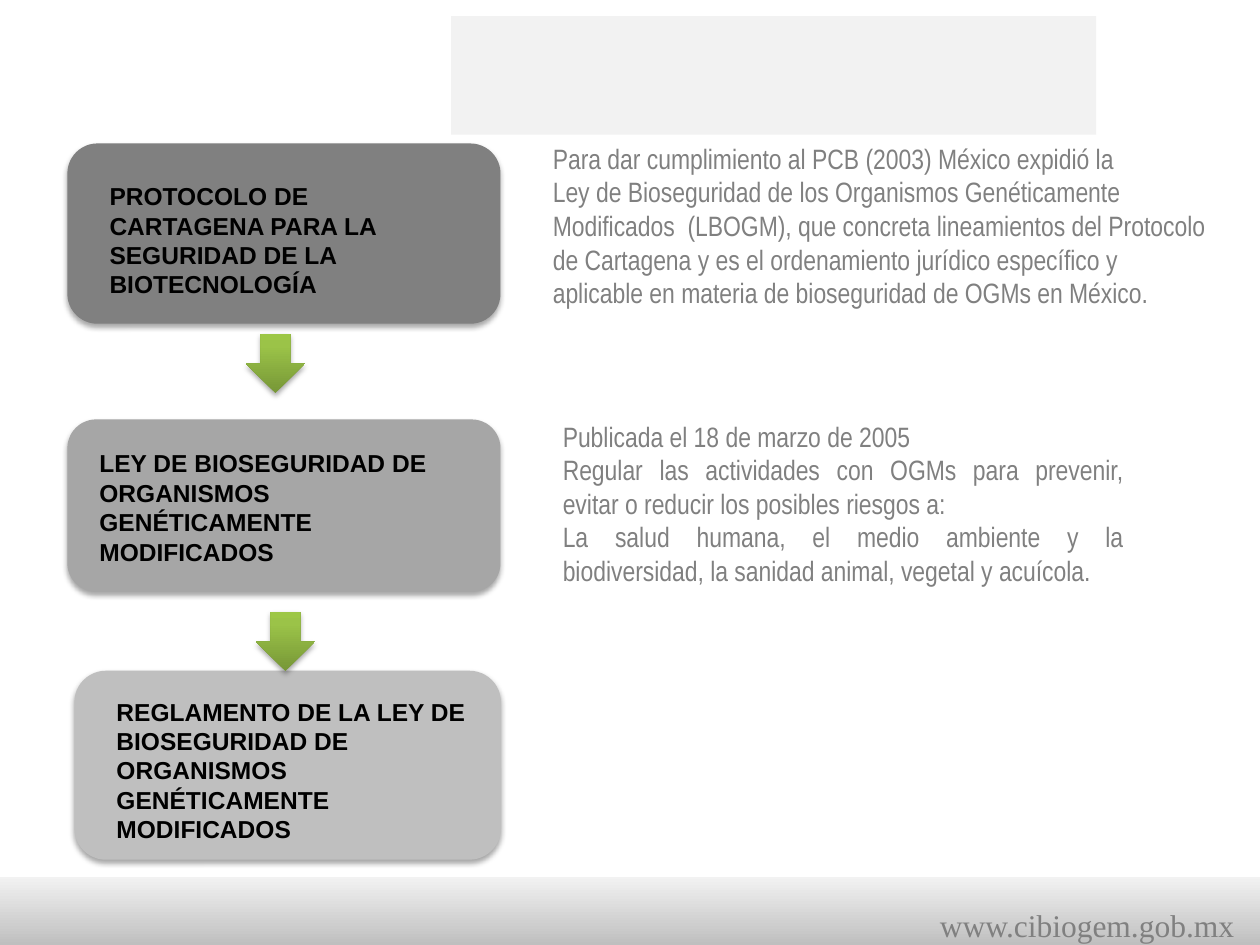
from dataclasses import dataclass

import pptx
import pptx.dml.color
import pptx.enum.shapes
import pptx.enum.text
import pptx.oxml
import pptx.oxml.ns
import pptx.util

Pt = pptx.util.Pt
Shape = pptx.enum.shapes.MSO_SHAPE
Align = pptx.enum.text.PP_ALIGN
GREY_TEXT = "808080"
GREEN_STOPS = ((0, "779737"), (80, "9BC348"), (100, "9DC746"))
FOOTER_STOPS = ((0, "BFBFBF"), (100, "F2F2F2"))


@dataclass(frozen=True)
class Box:
    left: float
    top: float
    width: float
    height: float

    def lengths(self) -> tuple:
        return tuple(Pt(n) for n in (self.left, self.top, self.width, self.height))


@dataclass(frozen=True)
class Norm:
    title: str
    card: Box
    label: Box
    fill: str


def rgb(colour: str) -> pptx.dml.color.RGBColor:
    return pptx.dml.color.RGBColor.from_string(colour)


def add_panel(slide, kind, box: Box, fill: str = "", stops: tuple = (), shadow: bool = False):
    panel = slide.shapes.add_shape(kind, *box.lengths())
    panel.shadow.inherit = False
    panel.line.fill.background()
    if stops:
        paint_upward(panel, stops)
    else:
        panel.fill.solid()
        panel.fill.fore_color.rgb = rgb(fill)
    if shadow:
        cast_shadow(panel)
    return panel


def paint_upward(panel, stops: tuple) -> None:
    marks = "".join(
        f'<a:gs pos="{position * 1000}"><a:srgbClr val="{colour}"/></a:gs>'
        for position, colour in stops
    )
    gradient = pptx.oxml.parse_xml(
        f'<a:gradFill {pptx.oxml.ns.nsdecls("a")} rotWithShape="1">'
        f'<a:gsLst>{marks}</a:gsLst><a:lin ang="16200000" scaled="0"/></a:gradFill>'
    )
    geometry = panel._element.spPr.find(pptx.oxml.ns.qn("a:prstGeom"))
    geometry.addnext(gradient)


def cast_shadow(panel) -> None:
    effects = panel._element.spPr.find(pptx.oxml.ns.qn("a:effectLst"))
    effects.append(pptx.oxml.parse_xml(
        f'<a:outerShdw {pptx.oxml.ns.nsdecls("a")} blurRad="{Pt(3.1)}" dist="{Pt(1.8)}" '
        'dir="5400000" rotWithShape="0"><a:srgbClr val="000000">'
        '<a:alpha val="35000"/></a:srgbClr></a:outerShdw>'
    ))


def add_text(slide, box: Box, text: str, *, size: float, font: str, colour: str,
             bold: bool = False, align=Align.LEFT, wrap: bool = True) -> None:
    frame = slide.shapes.add_textbox(*box.lengths()).text_frame
    frame.word_wrap = wrap
    frame.auto_size = pptx.enum.text.MSO_AUTO_SIZE.SHAPE_TO_FIT_TEXT
    frame.text = text
    for paragraph in frame.paragraphs:
        paragraph.alignment = align
        for run in paragraph.runs:
            run.font.size = Pt(size)
            run.font.name = font
            run.font.bold = bold
            run.font.color.rgb = rgb(colour)


NORMS = (
    Norm("PROTOCOLO DE CARTAGENA PARA LA SEGURIDAD DE LA BIOTECNOLOGÍA",
         Box(38.5, 82, 247.5, 103), Box(55.5, 100, 219.5, 58.5), "808080"),
    Norm("LEY DE BIOSEGURIDAD DE ORGANISMOS GENÉTICAMENTE MODIFICADOS",
         Box(38.5, 239.7, 247.5, 98.6), Box(49.7, 252.7, 226.8, 75), "A6A6A6"),
    Norm("REGLAMENTO DE LA LEY DE BIOSEGURIDAD DE ORGANISMOS GENÉTICAMENTE MODIFICADOS",
         Box(42.5, 383.3, 243.8, 108), Box(59.5, 394.5, 221, 92), "BFBFBF"),
)
ARROWS = (Box(140.5, 190.8, 33.8, 33.8), Box(146.2, 349.7, 33.8, 33.8))
COMPLIANCE = (
    "Para dar cumplimiento al PCB (2003) México expidió la\n"
    "Ley de Bioseguridad de los Organismos Genéticamente Modificados  (LBOGM), "
    "que concreta lineamientos del Protocolo de Cartagena y es el ordenamiento "
    "jurídico específico y aplicable en materia de bioseguridad de OGMs en México."
)
PURPOSE = (
    "Publicada el 18 de marzo de 2005\n"
    "Regular las actividades con OGMs para prevenir, evitar o reducir los posibles riesgos a:\n"
    "La salud humana, el medio ambiente y la biodiversidad, la sanidad animal, "
    "vegetal y acuícola."
)


def main() -> None:
    deck = pptx.Presentation()
    deck.slide_width, deck.slide_height = Pt(720), Pt(540)
    slide = deck.slides.add_slide(deck.slide_layouts[6])

    add_panel(slide, Shape.RECTANGLE, Box(257.8, 9.2, 368.6, 67.8), fill="F2F2F2")
    add_panel(slide, Shape.RECTANGLE, Box(0, 501, 720, 39), stops=FOOTER_STOPS)
    add_text(slide, Box(530, 514, 185.8, 29), "www.cibiogem.gob.mx", size=18,
             font="Times New Roman", colour=GREY_TEXT, wrap=False)

    for norm in NORMS:
        add_panel(slide, Shape.ROUNDED_RECTANGLE, norm.card, fill=norm.fill, shadow=True)
        add_text(slide, norm.label, norm.title, size=14, font="Arial",
                 colour="000000", bold=True)
    for arrow in ARROWS:
        add_panel(slide, Shape.DOWN_ARROW, arrow, stops=GREEN_STOPS, shadow=True)

    add_text(slide, Box(308.8, 77.2, 389.5, 104.5), COMPLIANCE, size=16,
             font="Arial Narrow", colour=GREY_TEXT)
    add_text(slide, Box(314.5, 236, 334.8, 104.5), PURPOSE, size=16,
             font="Arial Narrow", colour=GREY_TEXT, align=Align.JUSTIFY)
    deck.save("out.pptx")


if __name__ == "__main__":
    main()
